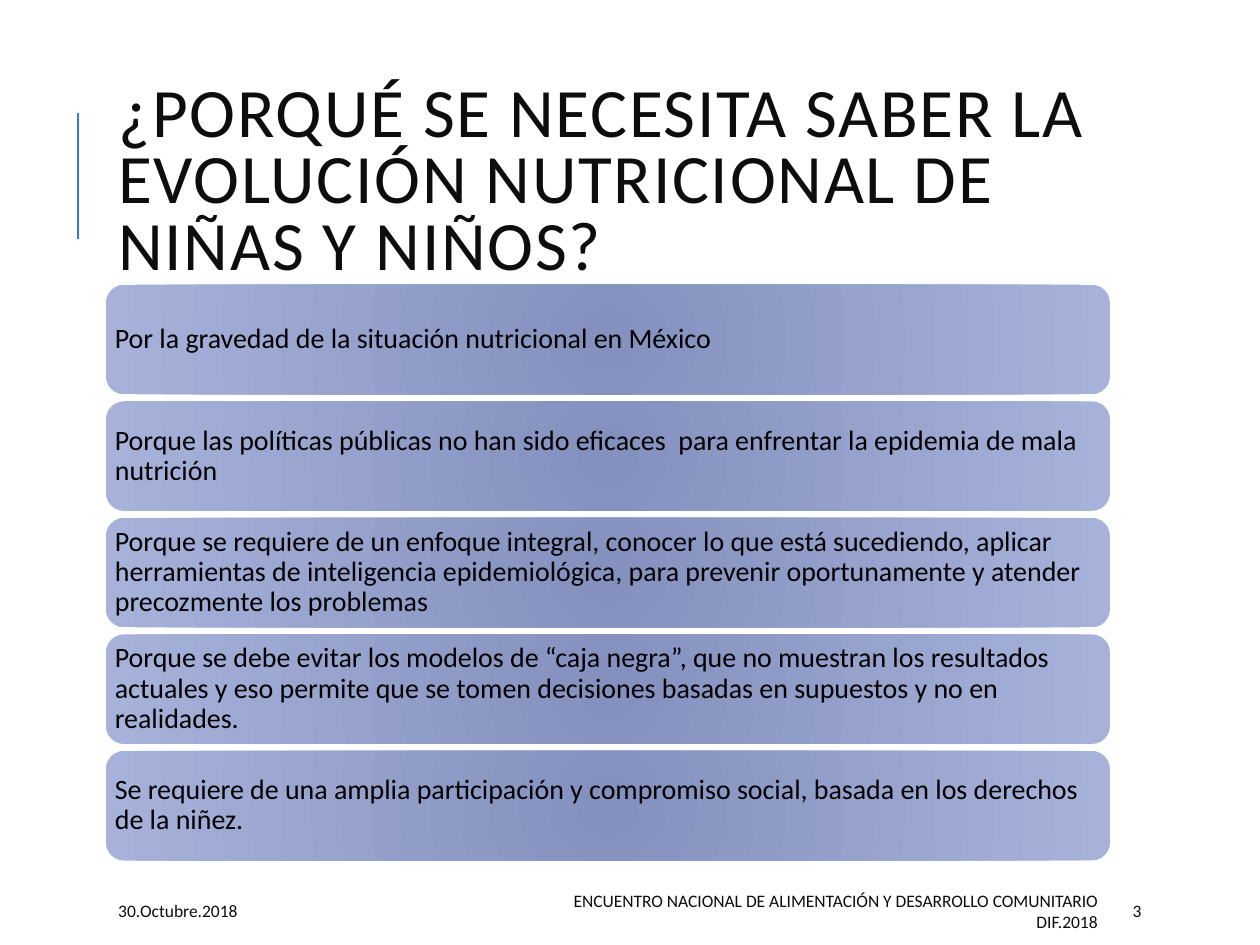
from lxml import etree
from pptx import Presentation
from pptx.dml.color import RGBColor
from pptx.enum.shapes import MSO_CONNECTOR, MSO_SHAPE
from pptx.enum.text import MSO_ANCHOR, MSO_AUTO_SIZE, PP_ALIGN
from pptx.oxml import parse_xml
from pptx.oxml.ns import nsdecls, qn
from pptx.util import Inches, Pt

COLORS = {
    "accent": "297FD5",
    "ink": "0D0D0D",
    "body": "000000",
    "center": "8491BE",
    "edge": "A7B2DA",
}
FONT = "Calibri"
LEFT, WIDTH = 0.84, 7.97
FIRST_TOP, PITCH, BAR_HEIGHT = 2.26, 0.925, 0.87

REASONS = [
    "Por la gravedad de la situación nutricional en México",
    "Porque las políticas públicas no han sido eficaces  para enfrentar la epidemia de mala nutrición",
    "Porque se requiere de un enfoque integral, conocer lo que está sucediendo, aplicar "
    "herramientas de inteligencia epidemiológica, para prevenir oportunamente y atender "
    "precozmente los problemas",
    "Porque se debe evitar los modelos de “caja negra”, que no muestran los resultados "
    "actuales y eso permite que se tomen decisiones basadas en supuestos y no en realidades.",
    "Se requiere de una amplia participación y compromiso social, basada en los derechos de la niñez.",
]
FOOTERS = [
    (0.84, 1.77, PP_ALIGN.LEFT, "30.Octubre.2018"),
    (3.97, 4.84, PP_ALIGN.RIGHT,
     "ENCUENTRO NACIONAL DE ALIMENTACIÓN Y DESARROLLO COMUNITARIO DIF.2018"),
    (8.89, 0.8, PP_ALIGN.LEFT, "3"),
]


def write(shape, text, size, color, align=PP_ALIGN.LEFT, spacing=1.0, inset=None):
    """Fill the shape with one vertically centred paragraph and return its run."""
    frame = shape.text_frame
    settings = {"word_wrap": True, "auto_size": MSO_AUTO_SIZE.NONE,
                "vertical_anchor": MSO_ANCHOR.MIDDLE}
    if inset is not None:
        for side in ("left", "top", "right", "bottom"):
            settings[f"margin_{side}"] = Inches(inset)
    for name, value in settings.items():
        setattr(frame, name, value)
    para = frame.paragraphs[0]
    para.alignment, para.line_spacing = align, spacing
    span = para.add_run()
    span.text = text
    for name, value in {"name": FONT, "size": Pt(size)}.items():
        setattr(span.font, name, value)
    span.font.color.rgb = RGBColor.from_string(COLORS[color])
    return span


def fill_radial(shape):
    fill = shape.fill
    fill.gradient()
    for stop, color in zip(fill.gradient_stops, ("center", "edge")):
        stop.color.rgb = RGBColor.from_string(COLORS[color])
    gradient = shape._element.spPr.find(qn("a:gradFill"))
    linear = gradient.find(qn("a:lin"))
    gradient.replace(linear, parse_xml(
        f'<a:path {nsdecls("a")} path="circle">'
        '<a:fillToRect l="100000" t="100000" r="100000" b="100000"/></a:path>'))


deck = Presentation()
deck.slide_width, deck.slide_height = Inches(10), Inches(7.5)
page = deck.slides.add_slide(deck.slide_layouts[5])

# Title and its accent line
title = page.shapes.title
title.left, title.top = Inches(LEFT), Inches(0.64)
title.width, title.height = Inches(WIDTH), Inches(1.64)
heading = write(title, "¿PORQUÉ SE NECESITA SABER LA EVOLUCIÓN NUTRICIONAL DE NIÑAS Y NIÑOS?",
                39.6, "ink", spacing=0.8)
heading.font._element.set("spc", "100")

accent = page.shapes.add_connector(
    MSO_CONNECTOR.STRAIGHT, Inches(0.62), Inches(1.9), Inches(0.62), Inches(0.9))
accent.line.color.rgb = RGBColor.from_string(COLORS["accent"])
accent.line.width = Pt(1.5)
etree.SubElement(accent._element.spPr, qn("a:effectLst"))

# Reasons, one bar each
for row, reason in enumerate(REASONS):
    bar = page.shapes.add_shape(
        MSO_SHAPE.ROUNDED_RECTANGLE, Inches(LEFT), Inches(FIRST_TOP + row * PITCH),
        Inches(WIDTH), Inches(BAR_HEIGHT))
    bar.shadow.inherit = False
    bar.line.fill.background()
    fill_radial(bar)
    write(bar, reason, 16, "body", spacing=0.9, inset=0.03)

# Footer
for left, width, align, text in FOOTERS:
    box = page.shapes.add_textbox(Inches(left), Inches(7.08), Inches(width), Inches(0.3))
    write(box, text, 10, "ink", align)

deck.save("out.pptx")
